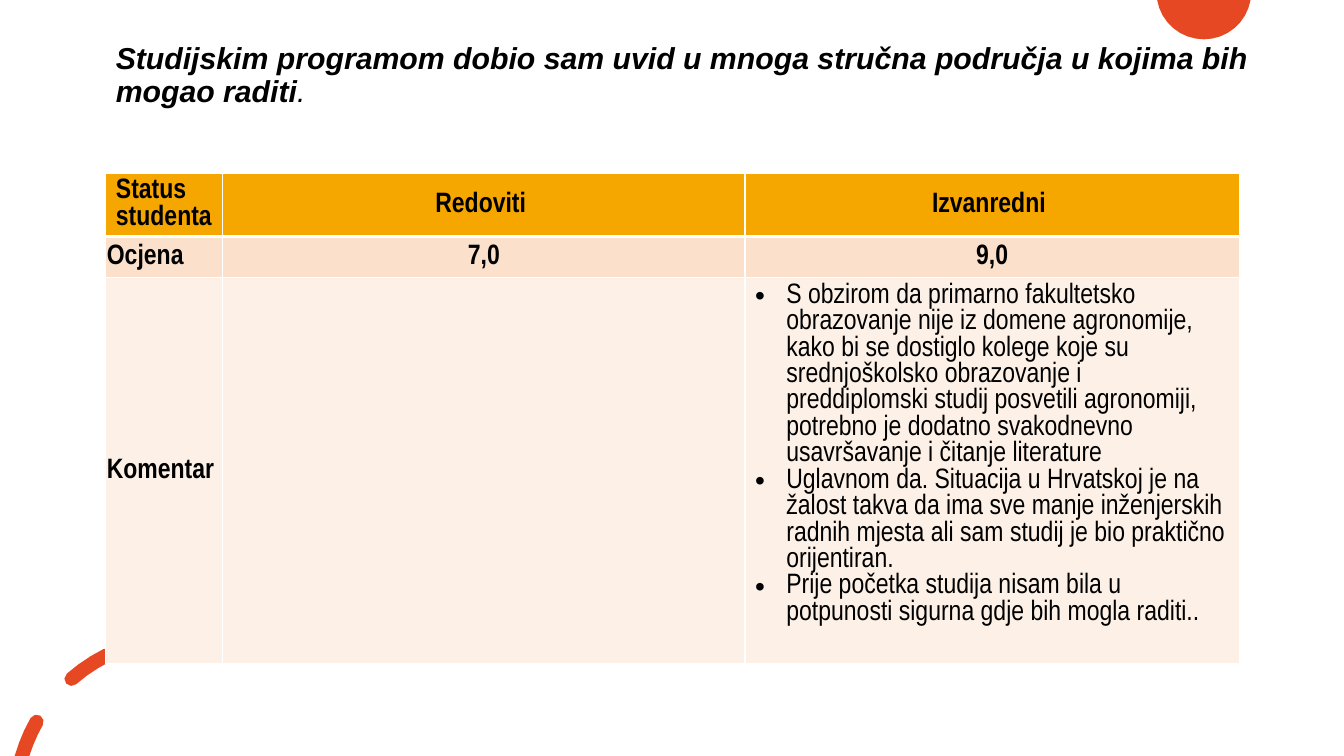
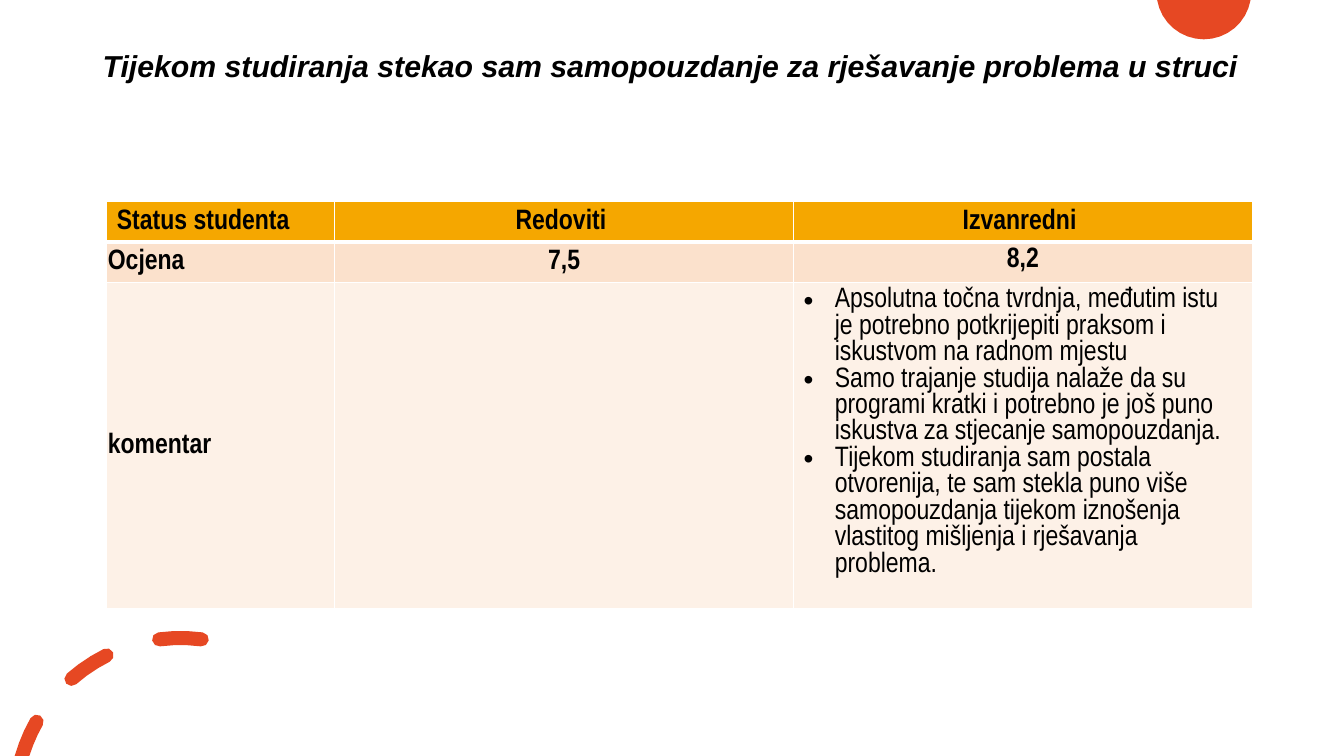
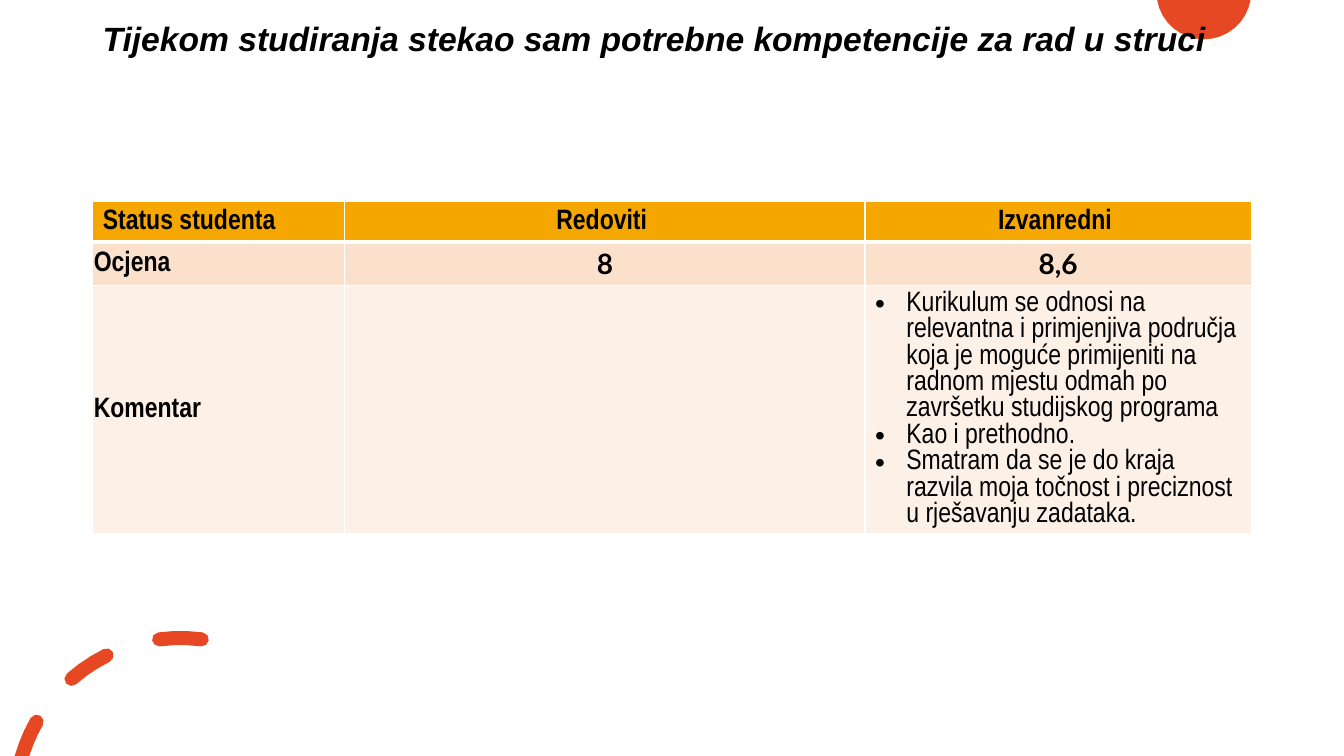
from math import cos, pi, radians, sin

from lxml import etree
from pptx import Presentation
from pptx.dml.color import RGBColor
from pptx.enum.text import MSO_ANCHOR, PP_ALIGN
from pptx.oxml.ns import qn
from pptx.util import Inches, Pt

TOP, MIDDLE = MSO_ANCHOR.TOP, MSO_ANCHOR.MIDDLE
LEFT, CENTER = PP_ALIGN.LEFT, PP_ALIGN.CENTER

W, H = 13.33, 7.5
COLORS = {"accent": "E64823", "text": "000000", "line": "FFFFFF"}
ROW_FILLS = ["F5A700", "FBE1CC", "FDF1E7"]
BULLET_INDENT = Inches(0.31)
NARROW = "Arial Narrow"
NARROW_SPACING = Pt(18.87)

SLIDES = [
    {
        "title": [("Studijskim programom dobio sam uvid u mnoga stručna područja "
                   "u kojima bih mogao raditi", True), (".", False)],
        "title_at": (1.05, 0.35), "title_size": 21.6,
        "table_at": (1.05, 1.72),
        "cols": [1.16, 5.18, 4.9], "rows": [0.62, 0.41, 3.83],
        "scores": ["7,0", "9,0"], "score_font": NARROW, "last_anchor": MIDDLE,
        "label": "Komentar",
        "comments": [
            "S obzirom da primarno fakultetsko obrazovanje nije iz domene agronomije, "
            "kako bi se dostiglo kolege koje su srednjoškolsko obrazovanje i "
            "preddiplomski studij posvetili agronomiji, potrebno je dodatno "
            "svakodnevno usavršavanje i čitanje literature",
            "Uglavnom da. Situacija u Hrvatskoj je na žalost takva da ima sve manje "
            "inženjerskih radnih mjesta ali sam studij je bio praktično orijentiran.",
            "Prije početka studija nisam bila u potpunosti sigurna gdje bih mogla raditi..",
        ],
    },
    {
        "title": [("Tijekom studiranja stekao sam samopouzdanje za rješavanje "
                   "problema u struci", True)],
        "title_at": (0.92, 0.27), "title_size": 21.6,
        "table_at": (1.06, 2),
        "cols": [2.26, 4.55, 4.55], "rows": [0.4, 0.4, 3.24],
        "scores": ["7,5", "8,2"], "score_font": NARROW, "last_anchor": TOP,
        "label": "komentar",
        "comments": [
            "Apsolutna točna tvrdnja, međutim istu je potrebno potkrijepiti praksom i "
            "iskustvom na radnom mjestu",
            "Samo trajanje studija nalaže da su programi kratki i potrebno je još puno "
            "iskustva za stjecanje samopouzdanja.",
            "Tijekom studiranja sam postala otvorenija, te sam stekla puno više "
            "samopouzdanja tijekom iznošenja vlastitog mišljenja i rješavanja problema.",
        ],
    },
    {
        "title": [("Tijekom studiranja stekao sam potrebne kompetencije za rad "
                   "u struci", True)],
        "title_at": (0.92, 0), "title_size": 24,
        "table_at": (0.92, 2),
        "cols": [2.5, 5.16, 3.83], "rows": [0.4, 0.43, 2.46],
        "scores": ["8", "8,6"], "score_font": "Lato", "last_anchor": TOP,
        "label": "Komentar",
        "comments": [
            "Kurikulum se odnosi na relevantna i primjenjiva područja koja je moguće "
            "primijeniti na radnom mjestu odmah po završetku studijskog programa",
            "Kao i prethodno.",
            "Smatram da se je do kraja razvila moja točnost i preciznost u rješavanju "
            "zadataka.",
        ],
    },
]

# Disc cut by the top edge
disc = []
for i in range(17):
    t = radians(9.8 + 160.4 * i / 16)
    disc.append((11.94 + 0.47 * cos(t), max(0, -0.08 + 0.47 * sin(t))))

# Round-ended dashes along an arc; the first one is cut flat by the bottom edge
CX, CY, RADIUS, HALF = 1.79, 7.97, 1.64, 0.07
ARC, CAP = 3, 4
dashes = []
for outer, inner, end in [(-74.1, -72.6, -60.4), (-41.2, -41.2, -26.5), (-7.4, -7.4, 7.4)]:
    a, c, b = radians(outer), radians(inner), radians(end)
    caps = [(HALF * cos(pi * i / CAP), HALF / RADIUS * sin(pi * i / CAP))
            for i in range(1, CAP)]
    polar = [(RADIUS + HALF, a + (b - a) * i / ARC) for i in range(ARC + 1)]
    polar += [(RADIUS + dr, b + dt) for dr, dt in caps]
    polar += [(RADIUS - HALF, b + (c - b) * i / ARC) for i in range(ARC + 1)]
    if outer == inner:
        polar += [(RADIUS - dr, a - dt) for dr, dt in caps]
    dashes.append([(CX + r * sin(t), min(H, CY - r * cos(t))) for r, t in polar])


def add_text(p, text, size=20, font=NARROW, bold=True, italic=False,
             align=LEFT, bullet=False):
    p.alignment = align
    if font == NARROW:
        p.line_spacing = NARROW_SPACING
    r = p.add_run()
    r.text = text
    r.font.size, r.font.name = Pt(size), font
    r.font.bold, r.font.italic = bold, italic
    r.font.color.rgb = RGBColor.from_string(COLORS["text"])
    if bullet:
        pPr = p._p.get_or_add_pPr()
        pPr.set("marL", str(BULLET_INDENT))
        pPr.set("indent", str(-BULLET_INDENT))
        etree.SubElement(pPr, qn("a:buFont"), typeface="Arial")
        etree.SubElement(pPr, qn("a:buChar"), char="•")


def style_cell(cell, row):
    tcPr = cell._tc.get_or_add_tcPr()
    for side in "LRTB":
        thick = (row == 0 and side == "B") or (row == 1 and side == "T")
        ln = etree.SubElement(tcPr, qn("a:ln" + side), w=str(Pt(3 if thick else 1)))
        fill = etree.SubElement(ln, qn("a:solidFill"))
        etree.SubElement(fill, qn("a:srgbClr"), val=COLORS["line"])
    cell.fill.solid()
    cell.fill.fore_color.rgb = RGBColor.from_string(ROW_FILLS[row])
    cell.vertical_anchor = MIDDLE


prs = Presentation()
prs.slide_width, prs.slide_height = Inches(W), Inches(H)

for data in SLIDES:
    s = prs.slides.add_slide(prs.slide_layouts[6])

    # Decoration
    for contours in ([disc], dashes):
        fb = None
        for contour in contours:
            pts = [(Inches(x), Inches(y)) for x, y in contour]
            if fb is None:
                fb = s.shapes.build_freeform(*pts[0], scale=1.0)
            else:
                fb.move_to(*pts[0])
            fb.add_line_segments(pts[1:], close=True)
        sp = fb.convert_to_shape()
        sp.shadow.inherit = False
        sp.fill.solid()
        sp.fill.fore_color.rgb = RGBColor.from_string(COLORS["accent"])
        sp.line.fill.background()

    # Title
    x, y = data["title_at"]
    tf = s.shapes.add_textbox(Inches(x), Inches(y), Inches(11.5), Inches(0.81)).text_frame
    tf.word_wrap, tf.vertical_anchor = True, MIDDLE
    p = tf.paragraphs[0]
    p.line_spacing = 0.9
    for text, bold in data["title"]:
        add_text(p, text, size=data["title_size"], font="Arial", bold=bold, italic=True)

    # Table grid
    x, y = data["table_at"]
    cols, rows = data["cols"], data["rows"]
    table = s.shapes.add_table(len(rows), len(cols), Inches(x), Inches(y),
                               Inches(sum(cols)), Inches(sum(rows))).table
    for col, width in zip(table.columns, cols):
        col.width = Inches(width)
    for row, height in zip(table.rows, rows):
        row.height = Inches(height)

    # Headings, scores and row labels
    texts = [["Status studenta", "Redoviti ", "Izvanredni "],
             ["Ocjena"] + data["scores"],
             [data["label"], "", ""]]
    for i, row in enumerate(texts):
        for j, text in enumerate(row):
            cell = table.cell(i, j)
            style_cell(cell, i)
            if i and j == 0:
                cell.margin_left = cell.margin_right = cell.margin_top = Inches(0.01)
                cell.margin_bottom = 0
            if text:
                add_text(cell.text_frame.paragraphs[0], text,
                         font=data["score_font"] if i == 1 and j else NARROW,
                         align=CENTER if j else LEFT)
    table.cell(1, 2).vertical_anchor = data["last_anchor"]

    # Comments
    cell = table.cell(2, 2)
    cell.vertical_anchor = TOP
    for n, text in enumerate(data["comments"]):
        tf = cell.text_frame
        p = tf.add_paragraph() if n else tf.paragraphs[0]
        add_text(p, text, bold=False, bullet=True)

prs.save("out.pptx")
